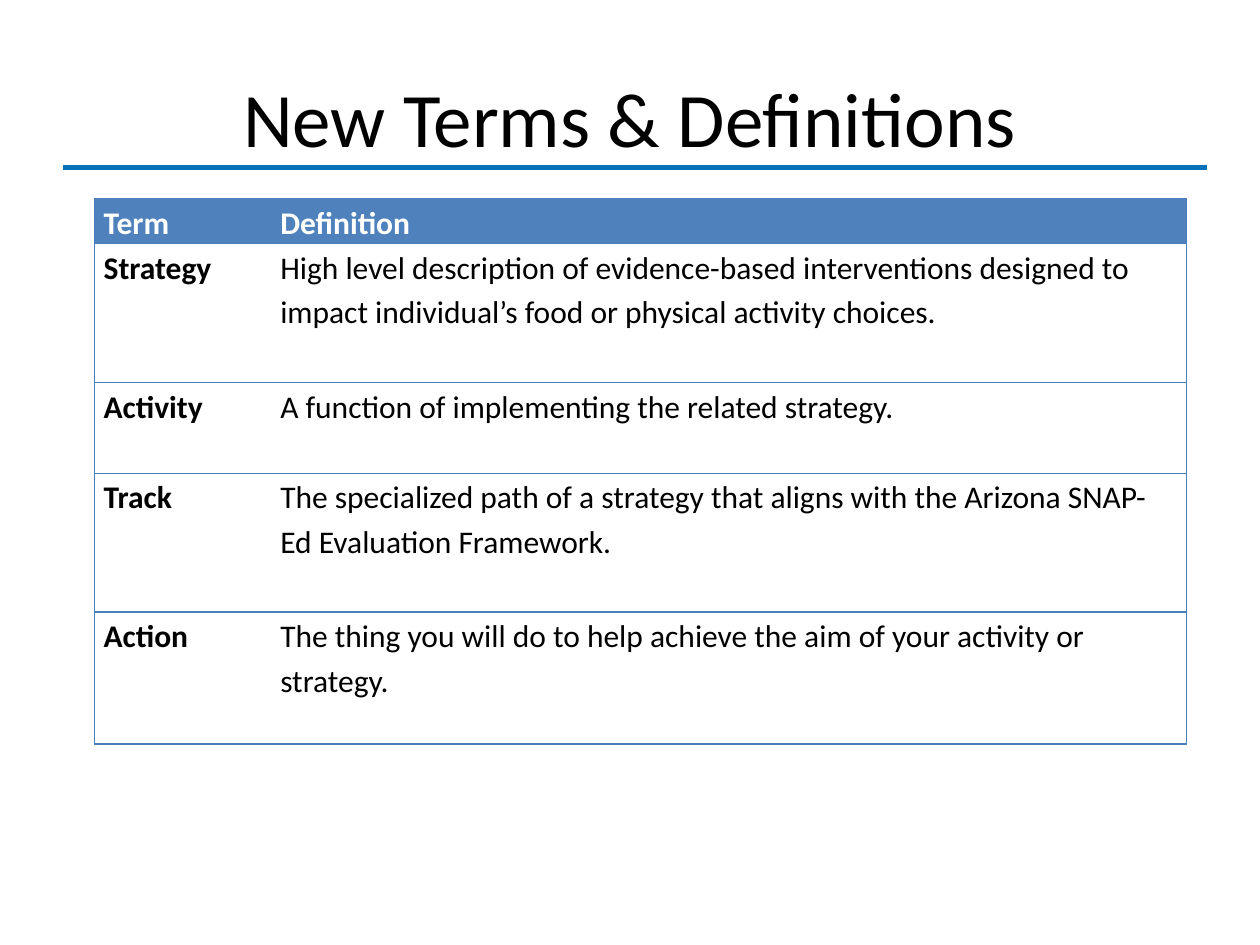
from lxml import etree
from pptx import Presentation
from pptx.dml.color import RGBColor
from pptx.enum import shapes, text
from pptx.oxml import ns
from pptx.util import Cm, Pt

# Content
TITLE = "New Terms & Definitions"
ROWS = [
    ("Term", "Definition"),
    ("Strategy", "High level description of evidence-based interventions designed to "
                 "impact individual’s food or physical activity choices."),
    ("Activity", "A function of implementing the related strategy."),
    ("Track", "The specialized path of a strategy that aligns with the Arizona "
              "SNAP-Ed Evaluation Framework."),
    ("Action", "The thing you will do to help achieve the aim of your activity or strategy."),
]

# Layout in centimetres
COLUMN_WIDTHS = [3.56, 18.46]
ROW_HEIGHTS = [0.9, 2.8, 1.83, 2.8, 2.66]
TABLE_LEFT, TABLE_TOP = 1.9, 4.01
RULE_LEFT, RULE_RIGHT, RULE_Y = 1.27, 24.33, 3.38

FONT = "Calibri"
BLACK, WHITE = "000000", "FFFFFF"
RULE_BLUE, HEADER_BLUE, BORDER_BLUE = "0772BA", "4F81BD", "4B7EBC"


def color(value):
    return RGBColor.from_string(value)


def style_text(paragraph, size, value, bold=False):
    font = paragraph.font
    font.name, font.size, font.bold = FONT, Pt(size), bold
    font.color.rgb = color(value)


def add_border(cell, side, visible):
    properties = cell._tc.get_or_add_tcPr()
    line = etree.SubElement(properties, ns.qn(f"a:ln{side}"), w=str(Pt(0.75)))
    if visible:
        fill = etree.SubElement(line, ns.qn("a:solidFill"))
        etree.SubElement(fill, ns.qn("a:srgbClr"), val=BORDER_BLUE)
    else:
        etree.SubElement(line, ns.qn("a:noFill"))


def add_rule(slide):
    rule = slide.shapes.add_connector(
        shapes.MSO_CONNECTOR.STRAIGHT,
        Cm(RULE_LEFT), Cm(RULE_Y), Cm(RULE_RIGHT), Cm(RULE_Y))
    rule.line.color.rgb = color(RULE_BLUE)
    rule.line.width = Pt(3)
    etree.SubElement(rule._element.spPr, ns.qn("a:effectLst"))


def add_title(slide):
    box = slide.shapes.add_textbox(Cm(1.27), Cm(0.76), Cm(22.86), Cm(3.18))
    frame = box.text_frame
    frame.word_wrap = True
    frame.vertical_anchor = text.MSO_ANCHOR.MIDDLE
    paragraph = frame.paragraphs[0]
    paragraph.text = TITLE
    paragraph.alignment = text.PP_ALIGN.CENTER
    style_text(paragraph, 44, BLACK)


def fill_cell(cell, content, is_header, is_term):
    cell.margin_left = cell.margin_right = Cm(0.19)
    cell.margin_top = cell.margin_bottom = 0
    # Only the edge between the two columns stays open
    for side, visible in (("L", is_term), ("R", not is_term), ("T", True), ("B", True)):
        add_border(cell, side, visible)
    if is_header:
        cell.fill.solid()
        cell.fill.fore_color.rgb = color(HEADER_BLUE)
    else:
        cell.fill.background()
    paragraph = cell.text_frame.paragraphs[0]
    paragraph.text = content
    paragraph.line_spacing = 1.15
    style_text(paragraph, 18, WHITE if is_header else BLACK, is_header or is_term)


def add_terms_table(slide):
    table = slide.shapes.add_table(
        len(ROWS), len(COLUMN_WIDTHS), Cm(TABLE_LEFT), Cm(TABLE_TOP),
        Cm(sum(COLUMN_WIDTHS)), Cm(sum(ROW_HEIGHTS))).table
    table.horz_banding = False
    for column, width in zip(table.columns, COLUMN_WIDTHS):
        column.width = Cm(width)
    for row_index, (row, height) in enumerate(zip(table.rows, ROW_HEIGHTS)):
        row.height = Cm(height)
        for column_index, content in enumerate(ROWS[row_index]):
            fill_cell(row.cells[column_index], content, row_index == 0, column_index == 0)


def main():
    presentation = Presentation()
    presentation.slide_width, presentation.slide_height = Cm(25.4), Cm(19.05)
    slide = presentation.slides.add_slide(presentation.slide_layouts[6])
    add_rule(slide)
    add_title(slide)
    add_terms_table(slide)
    presentation.save("out.pptx")


if __name__ == "__main__":
    main()
